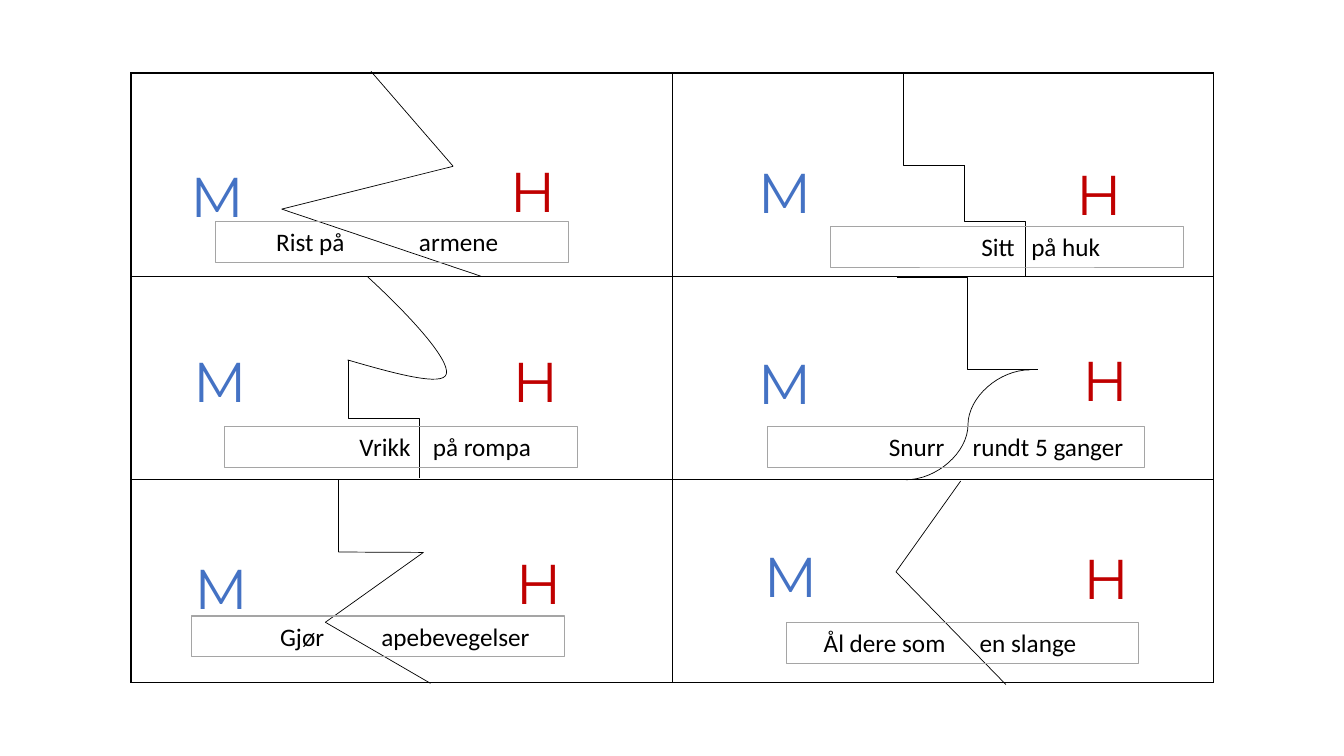
from dataclasses import dataclass
from itertools import pairwise

from lxml.etree import SubElement
from pptx import Presentation
from pptx.dml.color import RGBColor as RGB
from pptx.enum.shapes import MSO_CONNECTOR as Link, MSO_SHAPE as Shape
from pptx.enum.text import MSO_ANCHOR as Anchor, MSO_AUTO_SIZE as Auto, PP_ALIGN as Align
from pptx.oxml.ns import qn
from pptx.util import Cm, Pt


@dataclass(frozen=True)
class Theme:
    ink: str = "000000"
    blue: str = "4472C4"
    red: str = "C00000"
    gray: str = "A5A5A5"
    body: str = "Calibri"
    head: str = "Montserrat"
    small: int = 18
    large: int = 40
    thin: float = 0.5
    thick: float = 1


class Board:
    def __init__(self, slide, theme):
        self.shapes = slide.shapes
        self.theme = theme

    def grid(self, left, top, wide, high, rows, cols):
        frame = self.shapes.add_table(rows, cols, Cm(left), Cm(top), Cm(wide), Cm(high))
        table = frame.table
        table.first_row = table.horz_banding = False
        for cell in table.iter_cells():
            self.edge(cell)
            cell.fill.background()

    def edge(self, cell):
        """Rule all four sides of a table cell."""
        props = cell._tc.get_or_add_tcPr()
        for side in ("lnL", "lnR", "lnT", "lnB"):
            line = SubElement(props, qn(f"a:{side}"), w=str(Pt(self.theme.thick)))
            fill = SubElement(line, qn("a:solidFill"))
            SubElement(fill, qn("a:srgbClr"), val=self.theme.ink)

    def pen(self, line, color, width):
        line.color.rgb = RGB.from_string(color)
        line.width = Pt(width)

    def link(self, start, end, kind=Link.STRAIGHT):
        line = self.shapes.add_connector(kind, *map(Cm, (*start, *end)))
        self.pen(line.line, self.theme.ink, self.theme.thin)
        SubElement(line.element.spPr, qn("a:effectLst"))
        return line

    def chain(self, *points):
        for start, end in pairwise(points):
            self.link(start, end)

    def step(self, start, end):
        """Draw an elbow that leaves and arrives vertically."""
        (x1, y1), (x2, y2) = start, end
        midx, midy = (x1 + x2) / 2, (y1 + y2) / 2
        dx, dy = (y2 - y1) / 2, (x2 - x1) / 2
        line = self.link((midx + dx, midy - dy), (midx - dx, midy + dy), Link.ELBOW)
        line.element.spPr.find(qn("a:xfrm")).set("rot", str(270 * 60000))

    def curve(self, start, *points):
        """Draw cubic curves; each takes two control points and an end."""
        form = self.shapes.build_freeform(*map(Cm, start))
        form.add_line_segments([tuple(map(Cm, p)) for p in points], close=False)
        shape = form.convert_to_shape()
        lines = list(shape.element.iter(qn("a:lnTo")))
        for i in range(0, len(lines), 3):
            first, *rest = lines[i:i + 3]
            first.tag = qn("a:cubicBezTo")
            for node in rest:
                first.append(node[0])
                node.getparent().remove(node)
        shape.shadow.inherit = False
        shape.fill.background()
        self.pen(shape.line, self.theme.ink, self.theme.thin)

    def put(self, frame, text, font, size, color):
        frame.auto_size = Auto.SHAPE_TO_FIT_TEXT
        frame.word_wrap = True
        para = frame.paragraphs[0]
        para.text = text
        para.alignment = Align.LEFT
        para.font.name = font
        para.font.size = Pt(size)
        para.font.color.rgb = RGB.from_string(color)
        return para

    def letter(self, text, left, top, wide, color):
        box = self.shapes.add_textbox(Cm(left), Cm(top), Cm(wide), Cm(1.96))
        self.put(box.text_frame, text, self.theme.head, self.theme.large, color)

    def label(self, left, top, wide, words, inset, tab, width):
        """Frame two phrases, the second one set at a tab stop."""
        theme = self.theme
        box = self.shapes.add_shape(Shape.RECTANGLE, Cm(left), Cm(top), Cm(wide), Cm(1.03))
        box.shadow.inherit = False
        box.fill.background()
        self.pen(box.line, theme.gray, width)
        frame = box.text_frame
        frame.vertical_anchor = Anchor.TOP
        frame.margin_left = Cm(inset)
        para = self.put(frame, "\t".join(words), theme.body, theme.small, theme.ink)
        props = para._p.get_or_add_pPr()
        stops = props.makeelement(qn("a:tabLst"))
        SubElement(stops, qn("a:tab"), pos=str(Cm(tab)), algn="l")
        props.find(qn("a:defRPr")).addprevious(stops)


def main():
    deck = Presentation()
    deck.slide_width, deck.slide_height = Cm(33.87), Cm(19.05)
    theme = Theme()
    board = Board(deck.slides.add_slide(deck.slide_layouts[6]), theme)

    board.grid(3.3, 1.84, 27.28, 15.36, rows=3, cols=2)

    board.chain((9.35, 1.8), (11.42, 4.19), (7.1, 5.27), (12.12, 6.96))

    board.link((21.21, 1.85), (24.31, 4.17), Link.ELBOW)
    board.step((24.31, 4.19), (25.83, 6.98))

    board.curve((9.27, 6.98), (10.41, 8.03), (11.33, 9.07), (11.25, 9.42),
                (11.18, 9.75), (9.96, 9.42), (8.76, 9.07))
    board.step((8.79, 9.07), (10.57, 12.04))

    board.link((22.61, 6.98), (26.16, 9.3), Link.ELBOW)
    board.link((25.96, 9.32), (22.83, 12.09), Link.CURVE)

    board.chain((8.53, 12.09), (8.53, 13.91), (10.67, 13.92), (8.2, 15.68), (10.85, 17.22))
    board.chain((24.21, 12.12), (22.58, 14.41), (25.35, 17.25))

    for left, top in ((4.55, 3.94), (4.62, 8.61), (4.65, 13.82),
                      (18.85, 3.84), (18.85, 8.66), (19, 13.51)):
        board.letter("M", left, top, 3.05, theme.blue)
    for left, top in ((12.6, 3.81), (12.67, 8.61), (12.75, 13.69),
                      (26.87, 3.89), (27.03, 8.59), (27.05, 13.56)):
        board.letter("H", left, top, 2.26, theme.red)

    for left, top, wide, words, inset, tab, width in (
        (5.44, 5.58, 8.89, ("Rist på", "armene"), 1.52, 3.6, theme.thin),
        (5.66, 10.75, 8.89, ("Vrikk", "på rompa"), 3.4, 1.85, theme.thin),
        (20.93, 5.7, 8.89, ("Sitt", "på huk"), 3.8, 1.26, theme.thin),
        (19.33, 10.75, 9.5, ("Snurr", "rundt 5 ganger"), 3.07, 2.11, theme.thin),
        (4.83, 15.52, 9.4, ("Gjør", "apebevegelser"), 2.23, 2.55, theme.thick),
        (19.81, 15.69, 8.89, ("Ål dere som", "en slange"), 0.95, 3.93, theme.thin),
    ):
        board.label(left, top, wide, words, inset, tab, width)

    deck.save("out.pptx")


if __name__ == "__main__":
    main()
